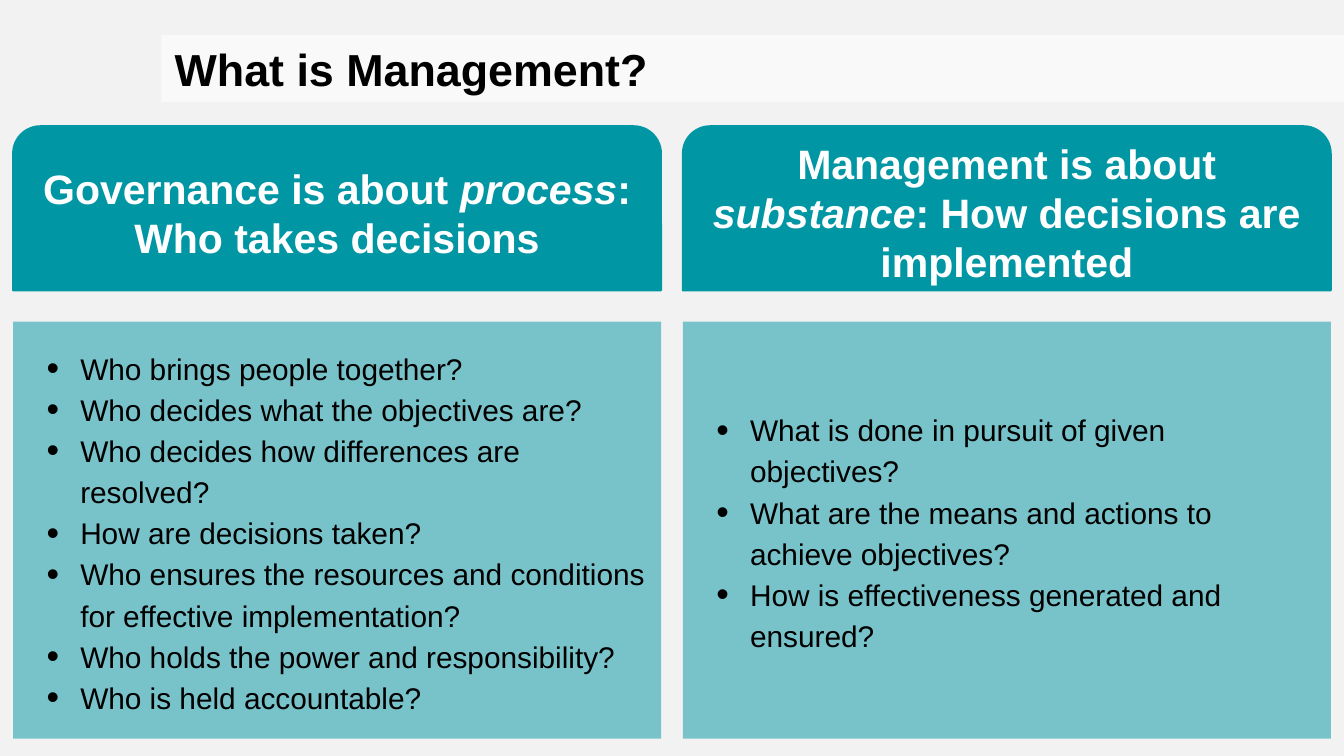
from lxml import etree
from pptx import Presentation
from pptx.dml.color import RGBColor
from pptx.enum.shapes import MSO_SHAPE
from pptx.enum.text import MSO_ANCHOR, MSO_AUTO_SIZE, PP_ALIGN
from pptx.oxml.ns import qn
from pptx.util import Pt

HEADER_SHAPE = MSO_SHAPE.ROUND_2_SAME_RECTANGLE
MIDDLE = MSO_ANCHOR.MIDDLE
NO_AUTOFIT = MSO_AUTO_SIZE.NONE
LEFT, CENTER = PP_ALIGN.LEFT, PP_ALIGN.CENTER

TEAL = RGBColor(0x00, 0x96, 0xA4)
GREY = RGBColor(0xF2, 0xF2, 0xF2)
WHITE = RGBColor(0xFF, 0xFF, 0xFF)
BLACK = RGBColor(0x00, 0x00, 0x00)

TITLE = "What is Management?"
# Each column: header as (text, italic) runs, then its questions
COLUMNS = [
    ([("Governance is about ", False), ("process", True),
      (": Who takes decisions", False)],
     ["Who brings people together?",
      "Who decides what the objectives are?",
      "Who decides how differences are resolved?",
      "How are decisions taken?",
      "Who ensures the resources and conditions for effective implementation?",
      "Who holds the power and responsibility?",
      "Who is held accountable?"]),
    ([("Management is about ", False), ("substance", True),
      (": How decisions are implemented", False)],
     ["What is done in pursuit of given objectives?",
      "What are the means and actions to achieve objectives?",
      "How is effectiveness generated and ensured?"]),
]

SLIDE_W, SLIDE_H = 720, 405
TITLE_BOX = (86.4, 18.72, 633.6, 36)
MARGIN, COL_W, GAP = 7, 347.2, 11.6
HEADER_TOP, HEADER_H = 67.6, 88
LIST_TOP, LIST_H = 172.3, 223.4
INDENT, HANGING = 28.8, 18

TITLE_FONT = {"name": "Arial", "size": Pt(24), "bold": True}
HEADER_FONT = {"name": "Arial", "size": Pt(22), "bold": True}
LIST_FONT = {"name": "Arial", "size": Pt(16)}


def place(sp, left, top, width, height):
    sp.left, sp.top, sp.width, sp.height = map(Pt, (left, top, width, height))


def fill_solid(sp, color, opacity=100):
    sp.fill.solid()
    sp.fill.fore_color.rgb = color
    if opacity < 100:
        clr = sp._element.spPr.find(qn("a:solidFill")).find(qn("a:srgbClr"))
        etree.SubElement(clr, qn("a:alpha"), val=str(opacity * 1000))


def setup_frame(sp, inset_y):
    tf = sp.text_frame
    tf.word_wrap = True
    tf.auto_size = NO_AUTOFIT
    tf.vertical_anchor = MIDDLE
    tf.margin_left = tf.margin_right = Pt(7.2)
    tf.margin_top = tf.margin_bottom = Pt(inset_y)
    return tf


def add_run(p, text, fmt, color, italic=False):
    r = p.add_run()
    r.text = text
    for key, value in fmt.items():
        setattr(r.font, key, value)
    r.font.color.rgb = color
    if italic:
        r.font.italic = True


def add_bullet(p):
    pPr = p._p.get_or_add_pPr()
    pPr.set("marL", str(Pt(INDENT)))
    pPr.set("indent", str(Pt(-HANGING)))
    clr = etree.SubElement(pPr, qn("a:buClr"))
    etree.SubElement(clr, qn("a:srgbClr"), val=str(BLACK))
    etree.SubElement(pPr, qn("a:buSzPct"), val="120000")
    etree.SubElement(pPr, qn("a:buFont"), typeface="Arial")
    etree.SubElement(pPr, qn("a:buChar"), char="•")


def fill_list(sp, questions, left):
    place(sp, left, LIST_TOP, COL_W, LIST_H)
    fill_solid(sp, TEAL, 50)
    tf = setup_frame(sp, 3.6)
    for i, question in enumerate(questions):
        p = tf.add_paragraph() if i else tf.paragraphs[0]
        p.line_spacing = 1.15
        p.space_before = Pt(0)
        add_bullet(p)
        add_run(p, question, LIST_FONT, BLACK)


def add_header(s, runs, left):
    sp = s.shapes.add_shape(HEADER_SHAPE, 0, 0, 0, 0)
    place(sp, left, HEADER_TOP, COL_W, HEADER_H)
    sp.shadow.inherit = False
    fill_solid(sp, TEAL)
    sp.line.color.rgb = TEAL
    sp.line.width = Pt(1)
    p = setup_frame(sp, 7.2).paragraphs[0]
    p.alignment = CENTER
    for text, italic in runs:
        add_run(p, text, HEADER_FONT, WHITE, italic)


prs = Presentation()
prs.slide_width, prs.slide_height = Pt(SLIDE_W), Pt(SLIDE_H)
s = prs.slides.add_slide(prs.slide_layouts.get_by_name("Two Content"))
s.background.fill.solid()
s.background.fill.fore_color.rgb = GREY

title = s.shapes.title
place(title, *TITLE_BOX)
fill_solid(title, WHITE, 55)
p = setup_frame(title, 3.6).paragraphs[0]
p.alignment = LEFT
add_run(p, TITLE, TITLE_FONT, BLACK)

for i, (header, questions) in enumerate(COLUMNS):
    left = MARGIN + i * (COL_W + GAP)
    fill_list(s.placeholders[i + 1], questions, left)
    add_header(s, header, left)

prs.save("out.pptx")
